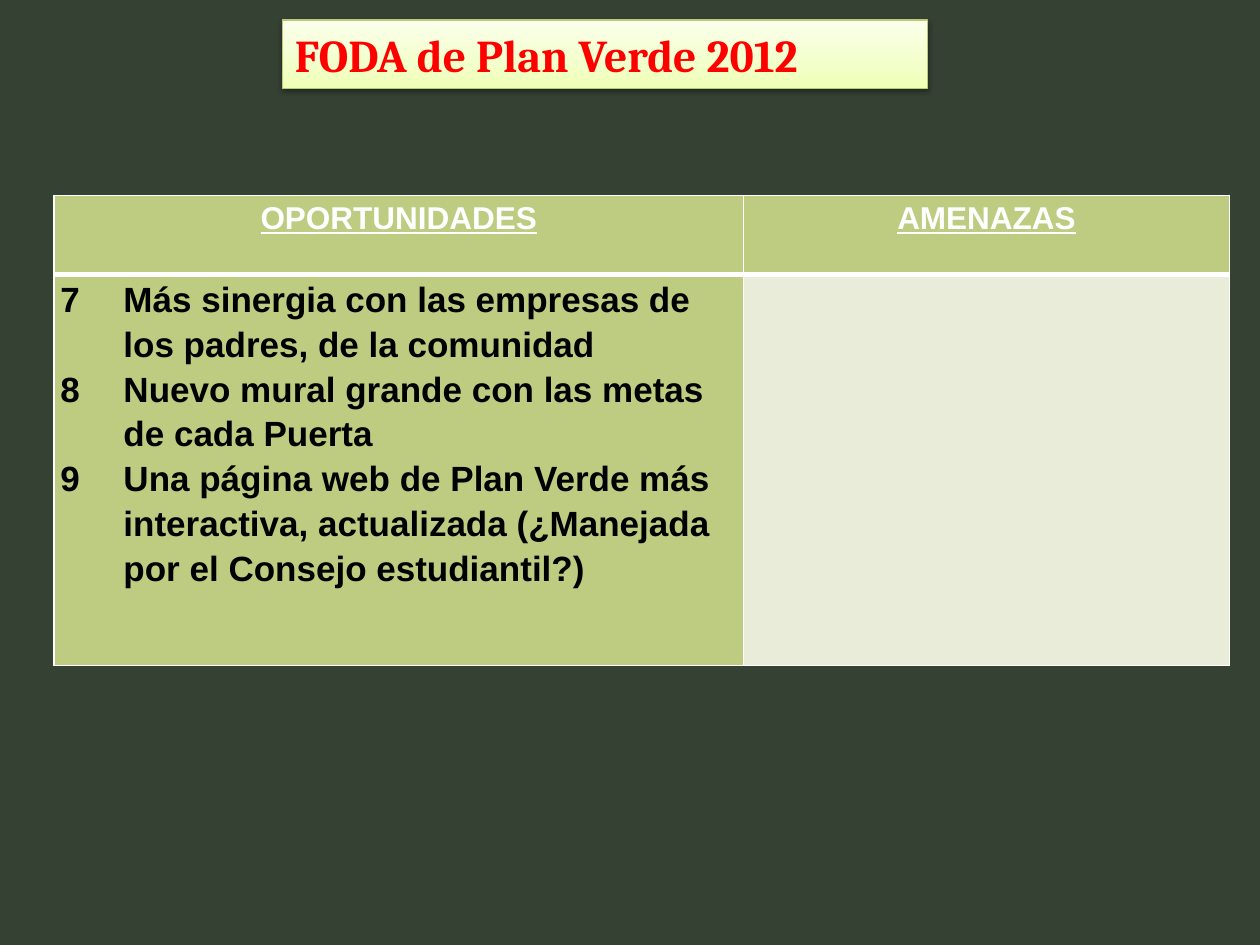
from pptx import Presentation
from pptx.dml.color import RGBColor
from pptx.enum.text import MSO_ANCHOR, PP_ALIGN
from pptx.oxml import parse_xml
from pptx.oxml.ns import nsdecls
from pptx.util import Inches, Pt

TITLE = "FODA de Plan Verde 2012"
HEADERS = ["OPORTUNIDADES", "AMENAZAS"]
OPPORTUNITIES = [
    "Más sinergia con las empresas de los padres, de la comunidad",
    "Nuevo mural grande con las metas de cada Puerta",
    "Una página web de Plan Verde más interactiva, actualizada "
    "(¿Manejada por el Consejo estudiantil?)",
]
FIRST_NUMBER = 7
COLUMN_WIDTHS = [5.47, 3.86]
ROW_HEIGHTS = [0.63, 3.1]
CELL_FILLS = [["BECC81", "BECC81"], ["BECC81", "E8ECD8"]]
TITLE_GRADIENT = [(0, "EFFFB5"), (35, "F3FFCA"), (100, "FAFFEB")]


def rgb(value):
    return RGBColor.from_string(value)


def drawing(tag, attributes="", content=""):
    """Return a DrawingML element."""
    return parse_xml(f'<a:{tag} {nsdecls("a")} {attributes}>{content}</a:{tag}>')


def style_paragraph(paragraph, size, color, font_name, underline=False):
    for span in paragraph.runs:
        font = span.font
        font.name, font.size, font.bold = font_name, Pt(size), True
        font.underline = underline
        font.color.rgb = rgb(color)


def style_cell(cell, fill, bottom_width):
    cell.margin_left = cell.margin_right = Inches(0.05)
    cell.margin_top = cell.margin_bottom = 0
    properties = cell._tc.get_or_add_tcPr()
    for side in "LRTB":
        width = bottom_width if side == "B" else 1
        properties.append(drawing(
            f"ln{side}", f'w="{Pt(width)}"',
            '<a:solidFill><a:srgbClr val="FFFFFF"/></a:solidFill>'))
    cell.fill.solid()
    cell.fill.fore_color.rgb = rgb(fill)


def add_title(slide):
    title = slide.shapes.title
    title.left, title.top = Inches(2.24), Inches(0.16)
    title.width, title.height = Inches(5.12), Inches(0.54)
    stops = "".join(
        f'<a:gs pos="{position * 1000}"><a:srgbClr val="{color}"/></a:gs>'
        for position, color in TITLE_GRADIENT)
    properties = title._element.spPr
    properties.append(drawing(
        "gradFill", 'rotWithShape="1"',
        f'<a:gsLst>{stops}</a:gsLst><a:lin ang="16200000" scaled="1"/>'))
    title.line.color.rgb = rgb("BBC97C")
    title.line.width = Pt(0.75)
    properties.append(drawing(
        "effectLst", "",
        f'<a:outerShdw blurRad="{Pt(3.1)}" dist="{Pt(1.6)}" dir="5400000" rotWithShape="0">'
        '<a:srgbClr val="000000"><a:alpha val="38000"/></a:srgbClr></a:outerShdw>'))
    frame = title.text_frame
    frame.text = TITLE
    frame.word_wrap = True
    frame.vertical_anchor = MSO_ANCHOR.MIDDLE
    frame.paragraphs[0].alignment = PP_ALIGN.LEFT
    style_paragraph(frame.paragraphs[0], 26, "FF0000", "Cambria")


def add_swot_table(slide):
    table = slide.shapes.add_table(
        len(ROW_HEIGHTS), len(COLUMN_WIDTHS), Inches(0.43), Inches(1.55),
        Inches(sum(COLUMN_WIDTHS)), Inches(sum(ROW_HEIGHTS))).table
    for column, width in zip(table.columns, COLUMN_WIDTHS):
        column.width = Inches(width)
    for row_index, (row, height) in enumerate(zip(table.rows, ROW_HEIGHTS)):
        row.height = Inches(height)
        for cell, fill in zip(row.cells, CELL_FILLS[row_index]):
            style_cell(cell, fill, 3 if row_index == 0 else 1)

    for cell, header in zip(table.rows[0].cells, HEADERS):
        cell.text = header
        paragraph = cell.text_frame.paragraphs[0]
        paragraph.alignment = PP_ALIGN.CENTER
        paragraph.line_spacing = 1.15
        style_paragraph(paragraph, 18, "FFFFFF", "Arial", underline=True)

    frame = table.cell(1, 0).text_frame
    frame.text = "\n".join(OPPORTUNITIES)
    for paragraph in frame.paragraphs:
        paragraph.line_spacing = 1.15
        properties = paragraph._p.get_or_add_pPr()
        properties.set("marL", str(Inches(0.5)))
        properties.set("indent", str(-Inches(0.5)))
        properties.append(drawing(
            "buAutoNum", f'type="arabicPlain" startAt="{FIRST_NUMBER}"'))
        style_paragraph(paragraph, 20, "000000", "Arial")


def main():
    deck = Presentation()
    deck.slide_width, deck.slide_height = Inches(10), Inches(7.5)
    slide = deck.slides.add_slide(deck.slide_layouts[5])
    slide.background.fill.solid()
    slide.background.fill.fore_color.rgb = rgb("354133")
    add_swot_table(slide)
    add_title(slide)
    deck.save("out.pptx")


if __name__ == "__main__":
    main()
